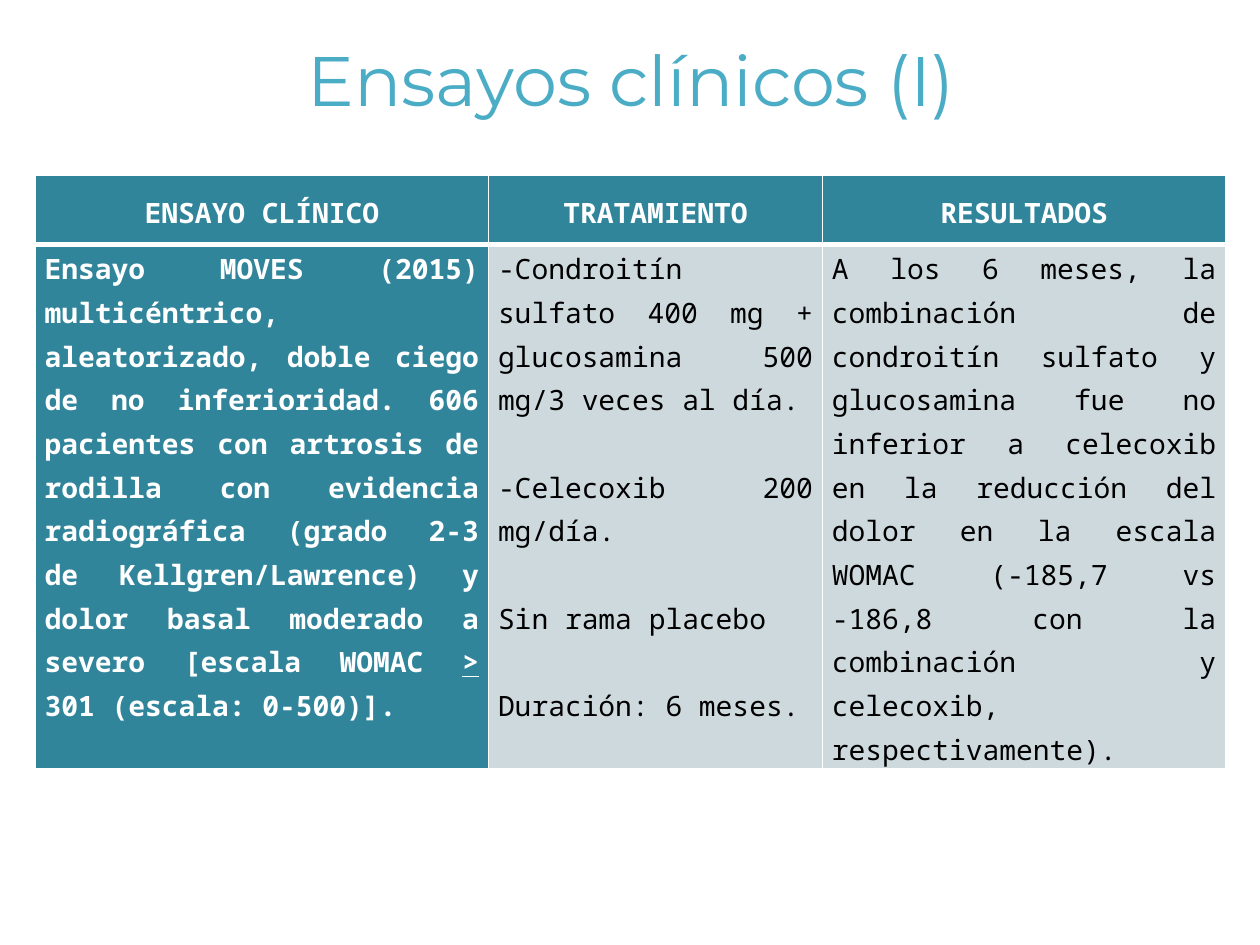
"""Build a slide with a table that sums up one clinical trial."""
from dataclasses import dataclass
from typing import Any

from lxml.etree import Element, SubElement
from pptx import Presentation
from pptx.dml.color import RGBColor
from pptx.enum.text import MSO_ANCHOR as Anchor, PP_ALIGN as Align
from pptx.oxml.ns import qn
from pptx.util import Cm, Pt

WHITE = RGBColor(0xFF, 0xFF, 0xFF)
BLACK = RGBColor(0, 0, 0)
SKY = RGBColor(0x4B, 0xAC, 0xC6)
TEAL = RGBColor(0x31, 0x85, 0x9B)
GREY = RGBColor(0xCE, 0xD9, 0xDE)

LEFT = Cm(0.71)
WIDTHS = (Cm(9.14), Cm(6.73), Cm(8.13))
HEIGHTS = (Cm(1.4), Cm(4.37))
THIN, THICK = Pt(1), Pt(3)
INSETS = {"margin_left": Cm(0.19), "margin_right": Cm(0.19),
          "margin_top": 0, "margin_bottom": 0}


@dataclass(frozen=True)
class Style:
    fill: RGBColor
    ink: RGBColor
    bold: bool
    align: Align
    anchor: Anchor


@dataclass(frozen=True)
class Entry:
    text: tuple[str, ...]
    style: Style
    after: int = 0
    mark: str = ""


HEAD = Style(TEAL, WHITE, True, Align.CENTER, Anchor.MIDDLE)
TRIAL = Style(TEAL, WHITE, True, Align.JUSTIFY, Anchor.TOP)
BODY = Style(GREY, BLACK, False, Align.JUSTIFY, Anchor.TOP)

ROWS = (
    (Entry(("ENSAYO CLÍNICO",), HEAD),
     Entry(("TRATAMIENTO",), HEAD),
     Entry(("RESULTADOS",), HEAD, after=10)),
    (Entry(("Ensayo MOVES (2015) multicéntrico, aleatorizado, doble ciego de "
            "no inferioridad. 606 pacientes con artrosis de rodilla con "
            "evidencia radiográfica (grado 2-3 de Kellgren/Lawrence) y dolor "
            "basal moderado a severo [escala WOMAC > 301 (escala: 0-500)].",),
           TRIAL, mark=">"),
     Entry(("-Condroitín sulfato 400 mg + glucosamina 500 mg/3 veces al día.",
            "-Celecoxib 200 mg/día.",
            "Sin rama placebo",
            "Duración: 6 meses."), BODY),
     Entry(("A los 6 meses, la combinación de condroitín sulfato y glucosamina "
            "fue no inferior a celecoxib en la reducción del dolor en la escala "
            "WOMAC (-185,7 vs -186,8 con la combinación y celecoxib, "
            "respectivamente).",), BODY, after=10)),
)


def apply(item: Any, form: dict[str, Any]) -> None:
    """Set each format value on the item."""
    for name, value in form.items():
        setattr(item, name, value)


def border(cell: Any, sides: dict[str, int]) -> None:
    """Draw white lines on the sides of a cell."""
    props = cell._tc.get_or_add_tcPr()
    for spot, (side, width) in enumerate(sides.items()):
        line = Element(qn(f"a:ln{side}"), w=str(width))
        fill = SubElement(line, qn("a:solidFill"))
        SubElement(fill, qn("a:srgbClr"), val=str(WHITE))
        props.insert(spot, line)


def write(para: Any, text: str, entry: Entry) -> None:
    """Write one paragraph, with its marked sign underlined."""
    style = entry.style
    start, sign, rest = text.partition(entry.mark) if entry.mark else (text, "", "")
    for part in filter(None, (start, sign, rest)):
        run = para.add_run()
        run.text = part
        apply(run.font, {"name": "Noto Sans Mono", "size": Pt(16),
                         "bold": style.bold, "underline": part == entry.mark})
        run.font.color.rgb = style.ink


def fill_cell(cell: Any, entry: Entry, sides: dict[str, int]) -> None:
    """Fill, frame and write one cell."""
    style = entry.style
    cell.fill.solid()
    cell.fill.fore_color.rgb = style.fill
    apply(cell, INSETS | {"vertical_anchor": style.anchor})
    border(cell, sides)
    frame = cell.text_frame
    for place, text in enumerate(entry.text):
        para = frame.add_paragraph() if place else frame.paragraphs[0]
        apply(para, {"alignment": style.align, "line_spacing": 1.15,
                     "space_before": Pt(25 if place else 0),
                     "space_after": Pt(entry.after)})
        write(para, text, entry)


def add_title(slide: Any, text: str) -> None:
    """Place and format the title."""
    title = slide.shapes.title
    apply(title, {"left": LEFT, "top": 0, "width": Cm(24.03), "height": Cm(3.18)})
    title.text_frame.vertical_anchor = Anchor.MIDDLE
    para = title.text_frame.paragraphs[0]
    para.alignment = Align.CENTER
    run = para.add_run()
    run.text = text
    apply(run.font, {"name": "Montserrat", "size": Pt(40)})
    run.font.color.rgb = SKY


def add_grid(slide: Any) -> None:
    """Add the table of trial, treatment and results."""
    grid = slide.shapes.add_table(len(ROWS), len(WIDTHS), LEFT, Cm(3.53),
                                  sum(WIDTHS), sum(HEIGHTS)).table
    grid.horz_banding = False
    for col, width in zip(grid.columns, WIDTHS):
        col.width = width
    for place, (row, height) in enumerate(zip(grid.rows, HEIGHTS)):
        row.height = height
        sides = {"L": THIN, "R": THIN, "T": THICK if place else THIN,
                 "B": THIN if place else THICK}
        for cell, entry in zip(row.cells, ROWS[place]):
            fill_cell(cell, entry, sides)


def main() -> None:
    """Build and save the deck."""
    deck = Presentation()
    apply(deck, {"slide_width": Cm(25.4), "slide_height": Cm(19.05)})
    slide = deck.slides.add_slide(deck.slide_layouts.get_by_name("Title Only"))
    add_title(slide, "Ensayos clínicos (I)")
    add_grid(slide)
    deck.save("out.pptx")


if __name__ == "__main__":
    main()
